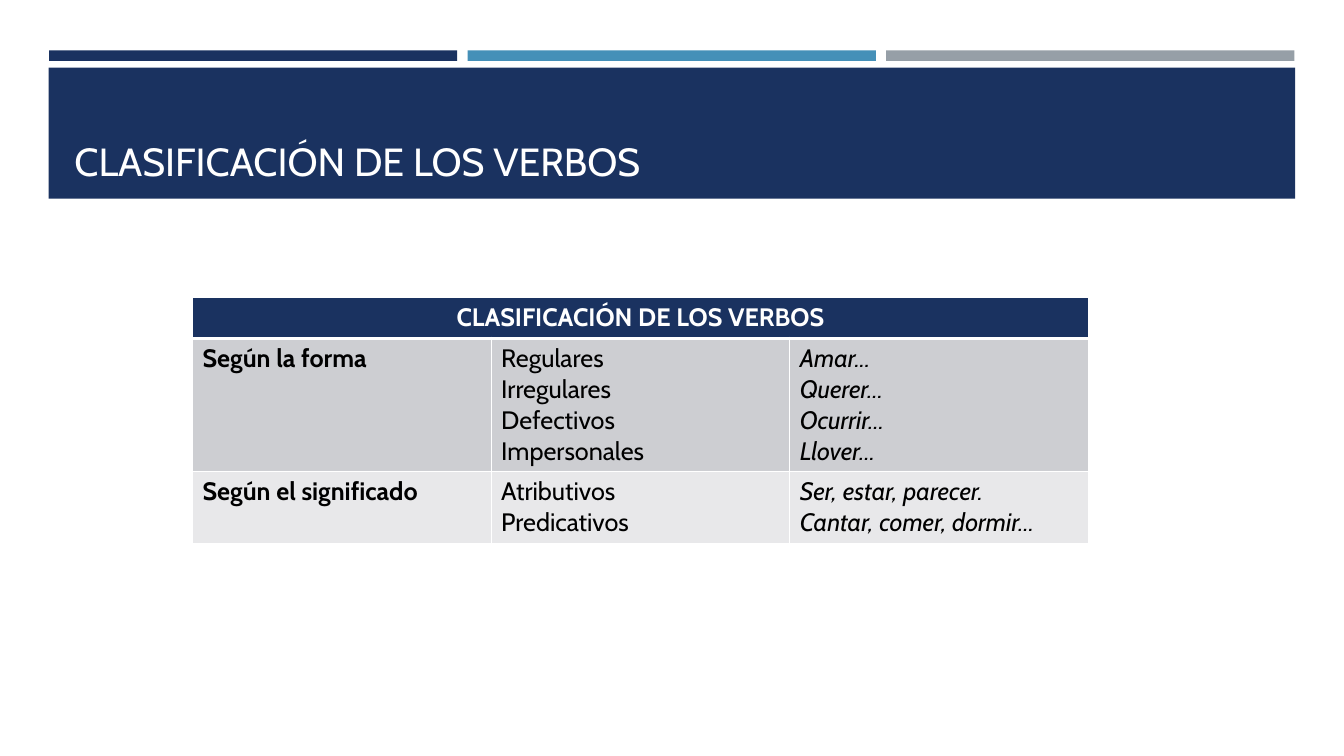
from lxml import etree
from pptx import Presentation
from pptx.dml.color import RGBColor
from pptx.enum.shapes import MSO_SHAPE
from pptx.enum.text import MSO_ANCHOR, PP_ALIGN
from pptx.oxml.ns import qn
from pptx.util import Pt

RECT = MSO_SHAPE.RECTANGLE
BOTTOM = MSO_ANCHOR.BOTTOM
LEFT, CENTER = PP_ALIGN.LEFT, PP_ALIGN.CENTER
NAVY, BLUE, GREY = "1A3260", "4590B8", "969FA7"
WHITE, BLACK = "FFFFFF", "000000"
DARK, LIGHT = "CDCED2", "E8E8EA"
TITLE = "CLASIFICACIÓN DE LOS VERBOS"


def paint(fill, color):
    fill.solid()
    fill.fore_color.rgb = RGBColor.from_string(color)


class Deck:
    font = "Cabin"

    def __init__(self, wide, high):
        self.prs = Presentation()
        self.prs.slide_width, self.prs.slide_height = Pt(wide), Pt(high)
        self.slide = self.prs.slides.add_slide(self.prs.slide_layouts[5])

    def label(self, frame, text, size, color, align=LEFT, bold=False, italic=False):
        frame.text = text
        for para in frame.paragraphs:
            para.alignment = align
            for run in para.runs:
                font = run.font
                font.name, font.size = self.font, Pt(size)
                font.bold, font.italic = bold, italic
                paint(font.fill, color)

    def bar(self, x, y, w, h, color):
        box = self.slide.shapes.add_shape(RECT, Pt(x), Pt(y), Pt(w), Pt(h))
        box.shadow.inherit = False
        box.line.fill.background()
        paint(box.fill, color)

    def title(self, x, y, w, h, text):
        """Fill the title placeholder and bring it to the front."""
        box = self.slide.shapes.title
        box.left, box.top, box.width, box.height = Pt(x), Pt(y), Pt(w), Pt(h)
        self.label(box.text_frame, text, 28, WHITE)
        box.text_frame.vertical_anchor = BOTTOM
        box.text_frame.word_wrap = True
        self.slide.shapes.element.append(box.element)

    def edge(self, cell, low):
        """Draw white borders; low is the width of the bottom one."""
        props = cell._tc.get_or_add_tcPr()
        sides = {"lnL": 1, "lnR": 1, "lnT": 1, "lnB": low}
        for spot, (side, width) in enumerate(sides.items()):
            line = etree.Element(qn(f"a:{side}"), w=str(Pt(width)))
            fill = etree.SubElement(line, qn("a:solidFill"))
            etree.SubElement(fill, qn("a:srgbClr"), val=WHITE)
            props.insert(spot, line)

    def table(self, x, y, w, head, rows, highs):
        """Add a table with a merged head row over banded rows."""
        cols = len(rows[0])
        grid = self.slide.shapes.add_table(
            len(rows) + 1, cols, Pt(x), Pt(y), Pt(w), Pt(sum(highs))).table
        for row, high in zip(grid.rows, highs):
            row.height = Pt(high)
        for cell in grid.rows[0].cells:
            paint(cell.fill, NAVY)
            self.edge(cell, 3)
        top = grid.cell(0, 0)
        top.merge(grid.cell(0, cols - 1))
        self.label(top.text_frame, head, 18, WHITE, CENTER, bold=True)
        for r, texts in enumerate(rows, 1):
            for c, text in enumerate(texts):
                cell = grid.cell(r, c)
                paint(cell.fill, DARK if r % 2 else LIGHT)
                self.edge(cell, 1)
                self.label(cell.text_frame, text, 18, BLACK,
                           bold=c == 0, italic=c == cols - 1)


def main():
    deck = Deck(960, 540)
    for i, color in enumerate((NAVY, BLUE, GREY)):
        deck.bar(35 + 299 * i, 36, 291.6, 7.5, color)
    deck.bar(34.8, 48.4, 890.4, 93.6, NAVY)
    deck.title(46, 55.4, 868.4, 80, TITLE)
    rows = [
        ("Según la forma",
         "Regulares\nIrregulares\nDefectivos\nImpersonales",
         "Amar...\nQuerer...\nOcurrir...\nLlover..."),
        ("Según el significado",
         "Atributivos\nPredicativos",
         "Ser, estar, parecer.\nCantar, comer, dormir..."),
    ]
    deck.table(137.5, 212.5, 640, TITLE, rows, (29.2, 95, 51))
    deck.prs.save("out.pptx")


if __name__ == "__main__":
    main()
